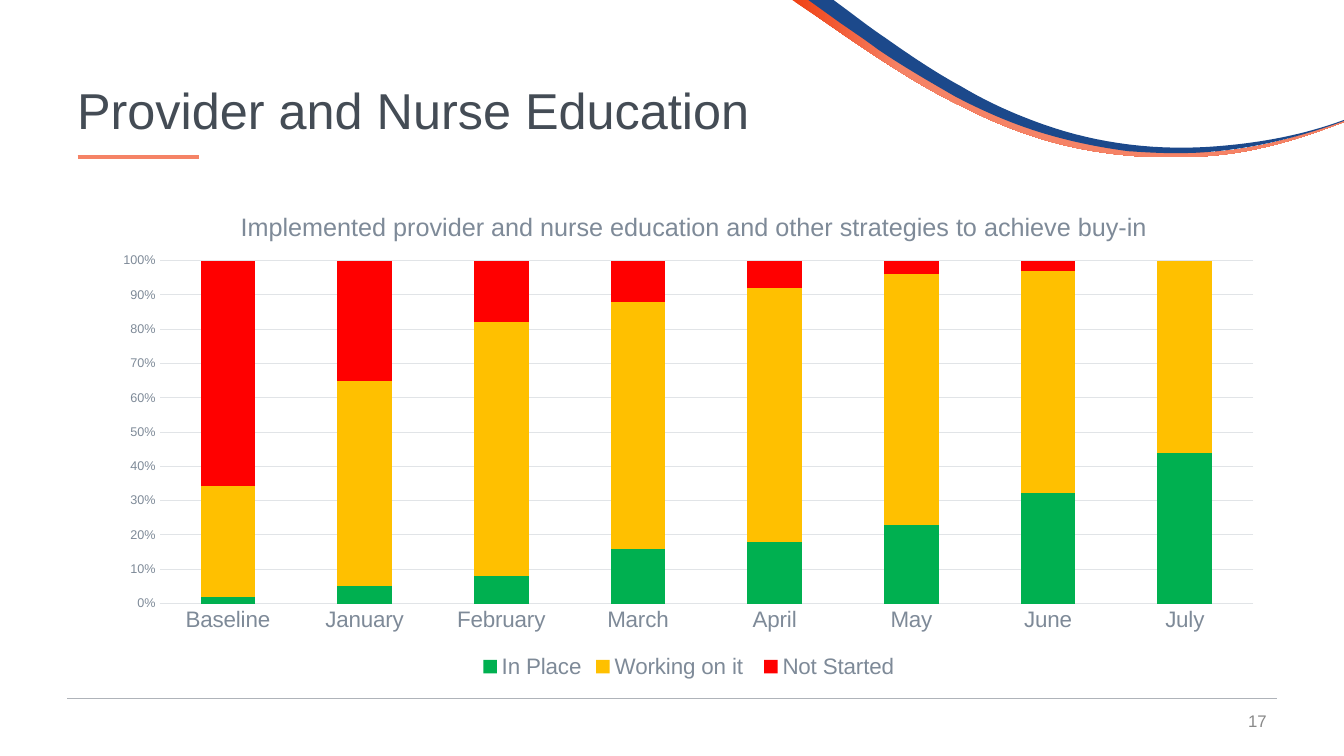
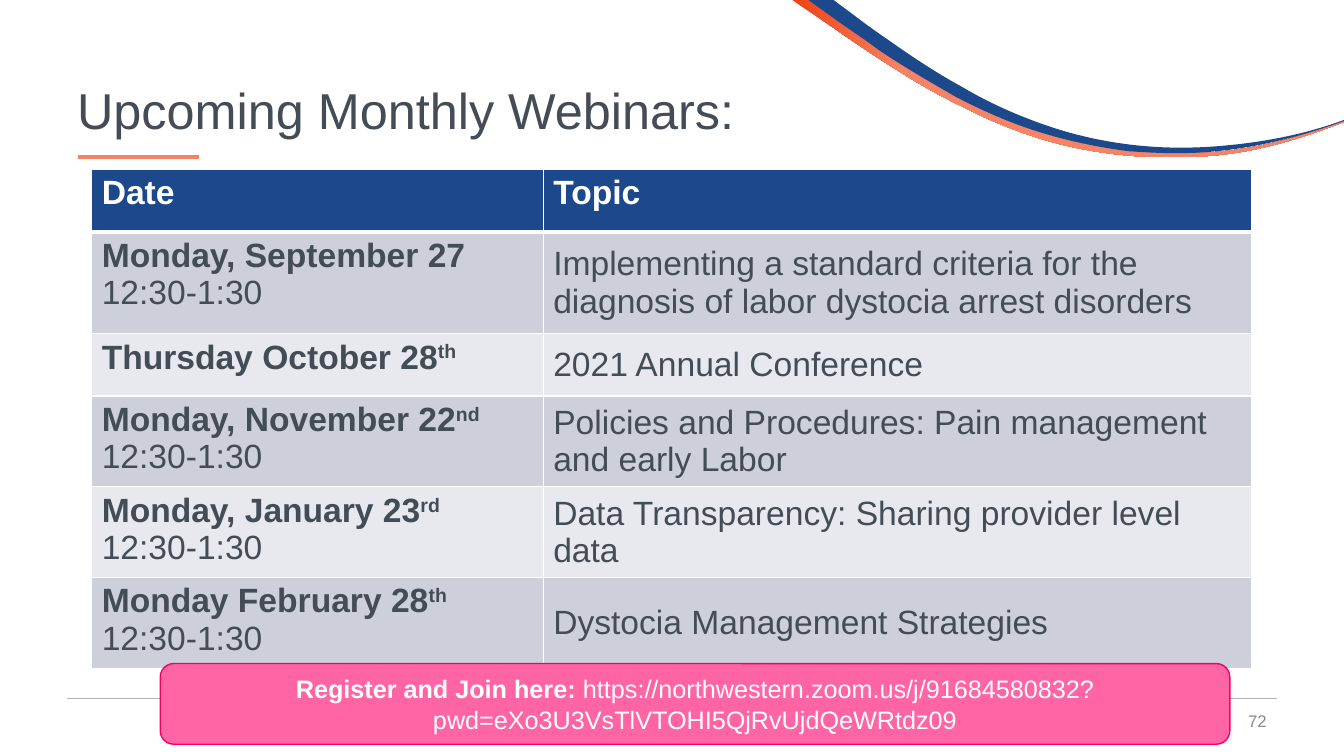
from dataclasses import dataclass

from lxml import etree
from pptx import Presentation
from pptx.chart import data as cd
from pptx.dml import color as col
from pptx.enum import chart as ce, shapes as sh, text as tx
from pptx.oxml import ns
from pptx.util import Pt


@dataclass(frozen=True)
class Theme:
    face: str = "Arial"
    ink: str = "444C55"
    grey: str = "7E8A98"
    page: str = "898989"
    rule: str = "AFB3B9"
    grid: str = "E1E4E7"
    navy: str = "1C498B"
    coral: str = "F58366"
    flame: str = "F04115"
    white: str = "FFFFFF"
    dark: str = "CDD0DA"
    light: str = "E8E9EE"
    pink: str = "FF65A5"
    edge: str = "F50064"
    head: int = 36
    cell: int = 24
    body: int = 18
    label: int = 16
    foot: int = 12
    tick: int = 9


T = Theme()
WIDE, HIGH = 960, 540

CORAL = [
    (565.9, 0), (579.6, 0), (583.2, 2.9),
    (600.5, 15.1, 617.8, 27.4, 635, 38.9),
    (653, 51.1, 671, 61.9, 689.8, 71.3),
    (708.5, 81.4, 728, 89.3, 748, 95.8),
    (778, 104.5, 809.5, 109.4, 841, 109.4), (848.9, 109.4),
    (886, 109.4, 922, 100.6, 960, 86.4), (960, 87.1),
    (922, 101.8, 886, 112.3, 841.7, 112.3),
    (809, 112.9, 777, 109, 746.6, 100.1),
    (726.5, 94.3, 706.3, 85.7, 687.6, 76.3),
    (668.2, 67, 650.2, 56.2, 632.2, 44.6),
    (614.2, 33.1, 596.9, 20.9, 578.9, 8.6),
]
NAVY = [
    (577.4, 0), (595.4, 0), (607, 8.6),
    (615.6, 15.1, 624.2, 21.6, 632.9, 27.4),
    (650.2, 39.6, 668.2, 51.8, 686.9, 61.9),
    (704.9, 72.7, 724.3, 81.4, 744.5, 88.6),
    (784.8, 103, 828, 108, 870.5, 104.4),
    (901, 101.9, 931, 96.4, 960, 85.7), (960, 86.4),
    (922, 100.4, 880, 110, 838, 109.4),
    (827, 109.4, 816.5, 108.7, 805.7, 108),
    (784.1, 105.1, 763.2, 100.8, 742.3, 94.3),
    (721.4, 87.8, 702, 79.2, 682.6, 69.1),
    (663.8, 58.3, 645.1, 47.5, 627.1, 35.3),
    (618.5, 28.8, 609.8, 23, 600.5, 16.6),
]

MONTHS = ["Baseline", "January", "February", "March", "April", "May", "June", "July"]
STATES = [
    ("In Place", "00B050", [2, 5, 8, 16, 18, 23, 32, 44]),
    ("Working on it ", "FFC000", [32, 60, 74, 72, 74, 74, 64, 56]),
    ("Not Started", "FF0000", [65, 35, 18, 12, 8, 4, 3, 0]),
]

HOUR = "12:30-1:30"
EVENTS = [
    ("Monday, September 27", "", HOUR,
     "Implementing a standard criteria for the diagnosis of labor dystocia arrest disorders"),
    ("Thursday October 28", "th", "", "2021 Annual Conference"),
    ("Monday, November 22", "nd", HOUR,
     "Policies and Procedures: Pain management and early Labor"),
    ("Monday, January 23", "rd", HOUR, "Data Transparency: Sharing provider level data"),
    ("Monday February 28", "th", HOUR, "Dystocia Management Strategies"),
]


def rgb(tone):
    return col.RGBColor.from_string(tone)


def paint(fill, tone):
    fill.solid()
    fill.fore_color.rgb = rgb(tone)


def style(font, size, tone, bold=False):
    font.name, font.size, font.bold = T.face, Pt(size), bold
    font.color.rgb = rgb(tone)


def pts(box):
    return [Pt(v) for v in box]


def sub(node, tag, **attrs):
    return etree.SubElement(node, ns.qn(tag), attrs)


def label(slide, box, words, size, tone, side=tx.PP_ALIGN.LEFT, lead=1.0):
    frame = slide.shapes.add_textbox(*pts(box)).text_frame
    frame.word_wrap = True
    frame.vertical_anchor = tx.MSO_ANCHOR.MIDDLE
    para = frame.paragraphs[0]
    para.text, para.alignment, para.line_spacing = words, side, lead
    style(para.font, size, tone)


def rule(slide, x, y, wide, tone, weight):
    line = slide.shapes.add_connector(
        sh.MSO_CONNECTOR.STRAIGHT, *pts((x, y, x + wide, y)))
    line.line.color.rgb = rgb(tone)
    line.line.width = Pt(weight)
    sub(line.element.spPr, "a:effectLst")


def trace(marks, steps=16):
    dots = []
    for mark in marks:
        if len(mark) == 2:
            dots.append(mark)
            continue
        ax, ay = dots[-1]
        bx, by, cx, cy, dx, dy = mark
        for n in range(1, steps + 1):
            t = n / steps
            s = 1 - t
            w = (s ** 3, 3 * s * s * t, 3 * s * t * t, t ** 3)
            dots.append((sum(k * v for k, v in zip(w, (ax, bx, cx, dx))),
                         sum(k * v for k, v in zip(w, (ay, by, cy, dy)))))
    return dots


def ribbon(slide, marks):
    dots = [tuple(pts(dot)) for dot in trace(marks)]
    pen = slide.shapes.build_freeform(*dots[0], scale=1.0)
    pen.add_line_segments(dots[1:], close=True)
    band = pen.convert_to_shape()
    band.shadow.inherit = False
    band.line.fill.background()
    return band


def swoosh(slide):
    fill = ribbon(slide, CORAL).fill
    fill.gradient()
    fill.gradient_angle = 0
    for stop, tone, place in zip(fill.gradient_stops, (T.flame, T.coral), (0, 0.2)):
        stop.color.rgb, stop.position = rgb(tone), place
    paint(ribbon(slide, NAVY).fill, T.navy)


def base(deck, title, page):
    slide = deck.slides.add_slide(deck.slide_layouts[6])
    swoosh(slide)
    rule(slide, 48, 499, 864, T.rule, 0.5)
    rule(slide, 55.5, 112, 86.5, T.coral, 2.5)
    label(slide, (696, 500.5, 216, 29), page, T.foot, T.page, tx.PP_ALIGN.RIGHT)
    label(slide, (48, 29, 864, 104), title, T.head, T.ink, lead=0.9)
    return slide


def place(node, spot, inner=False, **dims):
    old = node.find(ns.qn("c:layout"))
    if old is not None:
        node.remove(old)
    lay = etree.Element(ns.qn("c:layout"))
    node.insert(spot, lay)
    man = sub(lay, "c:manualLayout")
    if inner:
        sub(man, "c:layoutTarget", val="inner")
    for key in ("xMode", "yMode"):
        sub(man, "c:" + key, val="edge")
    for key, val in dims.items():
        sub(man, "c:" + key, val=str(val))


def bars(slide, box):
    data = cd.CategoryChartData()
    data.categories = MONTHS
    for name, _, vals in STATES:
        data.add_series(name, vals)
    chart = slide.shapes.add_chart(
        ce.XL_CHART_TYPE.COLUMN_STACKED_100, *pts(box), data).chart
    style(chart.font, 10, T.ink)

    chart.has_title = True
    para = chart.chart_title.text_frame.paragraphs[0]
    para.text = "Implemented provider and nurse education and other strategies to achieve buy-in"
    style(para.font, T.body, T.grey)
    chart.chart_title.include_in_layout = False
    place(chart.chart_title.element, 1, x=0.115, y=0.04)
    area = chart.element.find(".//" + ns.qn("c:plotArea"))
    place(area, 0, True, x=0.05, y=0.15, w=0.93, h=0.69)

    chart.has_legend = True
    chart.legend.position = ce.XL_LEGEND_POSITION.BOTTOM
    chart.legend.include_in_layout = False
    style(chart.legend.font, T.label, T.grey)

    cats, vals = chart.category_axis, chart.value_axis
    for axis, size in ((cats, T.label), (vals, T.tick)):
        axis.major_tick_mark = axis.minor_tick_mark = ce.XL_TICK_MARK.NONE
        style(axis.tick_labels.font, size, T.grey)
    vals.has_major_gridlines = True
    vals.major_unit = 0.1
    vals.tick_labels.number_format = "0%"
    vals.tick_labels.number_format_is_linked = False
    vals.format.line.fill.background()
    for line in (cats.format.line, vals.major_gridlines.format.line):
        line.color.rgb, line.width = rgb(T.grid), Pt(0.75)

    plot = chart.plots[0]
    plot.gap_width, plot.overlap, plot.vary_by_categories = 150, 100, False
    for bar, (_, tone, _) in zip(plot.series, STATES):
        paint(bar.format.fill, tone)


def border(cell, low):
    props = cell._tc.get_or_add_tcPr()
    for spot, side in enumerate("LRTB"):
        weight = low if side == "B" else 1
        line = etree.Element(ns.qn("a:ln" + side), w=str(Pt(weight)))
        sub(sub(line, "a:solidFill"), "a:srgbClr", val=T.white)
        props.insert(spot, line)


def fill_cell(cell, lines, tone, ink, low=1):
    paint(cell.fill, tone)
    border(cell, low)
    frame = cell.text_frame
    for n, (words, sup, bold) in enumerate(lines):
        para = frame.add_paragraph() if n else frame.paragraphs[0]
        para.add_run().text = words
        if sup:
            run = para.add_run()
            run.text = sup
            run._r.get_or_add_rPr().set("baseline", "30000")
        style(para.font, T.cell, ink, bold)


def agenda(slide, x, y):
    wides, highs = (322.5, 506), (44.6, 72.7, 44.6) + (60.8,) * 3
    grid = slide.shapes.add_table(
        len(highs), 2, *pts((x, y, sum(wides), sum(highs)))).table
    grid.horz_banding = False
    for part, wide in zip(grid.columns, wides):
        part.width = Pt(wide)
    for part, high in zip(grid.rows, highs):
        part.height = Pt(high)
    for n, word in enumerate(("Date", "Topic")):
        fill_cell(grid.cell(0, n), [(word, "", True)], T.navy, T.white, 3)
    for n, (day, sup, hour, topic) in enumerate(EVENTS, 1):
        tone = T.dark if n % 2 else T.light
        dates = [(day, sup, True)] + ([(hour, "", False)] if hour else [])
        fill_cell(grid.cell(n, 0), dates, tone, T.ink)
        fill_cell(grid.cell(n, 1), [(topic, "", False)], tone, T.ink)
        grid.cell(n, 1).vertical_anchor = tx.MSO_ANCHOR.MIDDLE


def banner(slide, box):
    pill = slide.shapes.add_shape(sh.MSO_SHAPE.ROUNDED_RECTANGLE, *pts(box))
    pill.shadow.inherit = False
    paint(pill.fill, T.pink)
    pill.line.color.rgb, pill.line.width = rgb(T.edge), Pt(1)
    frame = pill.text_frame
    frame.word_wrap = True
    frame.vertical_anchor = tx.MSO_ANCHOR.MIDDLE
    para = frame.paragraphs[0]
    para.alignment = tx.PP_ALIGN.CENTER
    for words, bold in (
            ("Register and Join here: ", True),
            ("https://northwestern.zoom.us/j/91684580832?pwd=eXo3U3VsTlVTOHI5QjRvUjdQeWRtdz09", False)):
        run = para.add_run()
        run.text = words
        style(run.font, T.body, T.white, bold)


def main():
    deck = Presentation()
    deck.slide_width, deck.slide_height = Pt(WIDE), Pt(HIGH)
    bars(base(deck, "Provider and Nurse Education", "17"), (72, 133, 840, 355))
    slide = base(deck, "Upcoming Monthly Webinars:", "72")
    agenda(slide, 65.5, 121)
    banner(slide, (114.5, 474, 764, 57.6))
    deck.save("out.pptx")


if __name__ == "__main__":
    main()
